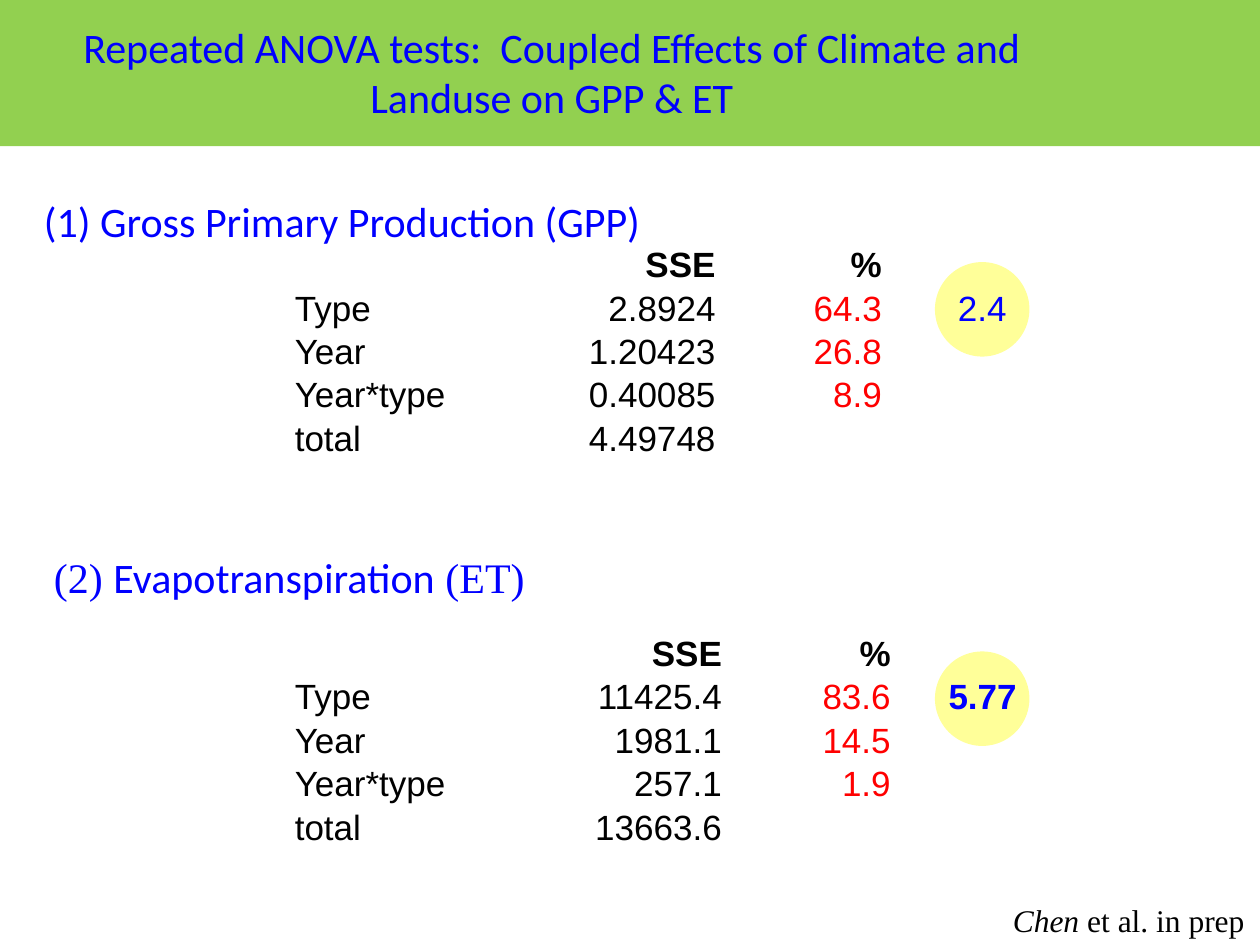
"""Build the slide of repeated ANOVA tests for GPP and ET."""
import pptx
import pptx.dml.color
import pptx.enum.shapes
import pptx.enum.text
import pptx.oxml.ns
import pptx.util

Inches = pptx.util.Inches
Align = pptx.enum.text.PP_ALIGN
Shape = pptx.enum.shapes.MSO_SHAPE

THEME = {
    "green": "92D050", "yellow": "FFFF99", "blue": "0000FF",
    "red": "FF0000", "black": "000000",
    "heading": 24, "table": 20, "credit": 18,
    "sans": "Calibri", "serif": "Times New Roman", "figures": "Arial",
    "plain_table": "{2D5ABB26-0587-4C30-8999-92F81FD0307C}",
}


def color(name):
    return pptx.dml.color.RGBColor.from_string(THEME[name])


def add_span(para, text, ink, size, face, **style):
    span = para.add_run()
    span.text = text
    span.font.color.rgb = color(ink)
    style.update(size=pptx.util.Pt(THEME[size]), name=THEME[face])
    for key, value in style.items():
        setattr(span.font, key, value)


deck = pptx.Presentation()
deck.slide_width, deck.slide_height = Inches(10), Inches(7.5)
page = deck.slides.add_slide(deck.slide_layouts[6])

for kind, place, fill in [
    (Shape.RECTANGLE, (0, 0, 10, 1.16), "green"),
    (Shape.OVAL, (7.42, 2.08, 0.75, 0.75), "yellow"),
    (Shape.OVAL, (7.42, 5.17, 0.75, 0.75), "yellow"),
]:
    shape = page.shapes.add_shape(kind, *map(Inches, place))
    shape.shadow.inherit = False
    shape.fill.solid()
    shape.fill.fore_color.rgb = color(fill)
    shape.line.fill.background()

title = "Repeated ANOVA tests:  Coupled Effects of Climate and Landuse on GPP & ET"
for place, wrap, align, ink, size, spans in [
    ((0.38, 0.12, 8, 0.91), True, Align.CENTER, "blue", "heading",
     [(title, "sans", False)]),
    ((0.25, 1.5, 4.98, 0.51), False, Align.LEFT, "blue", "heading",
     [("(1) Gross Primary Production (GPP)", "sans", False)]),
    ((0.33, 4.33, 3.98, 0.5), False, Align.LEFT, "blue", "heading",
     [("(2) ", "serif", False), ("Evapotranspiration", "sans", False),
      (" (ET)", "serif", False)]),
    ((7.94, 7.1, 2.06, 0.4), False, Align.LEFT, "black", "credit",
     [("Chen ", "serif", True), ("et al. in prep", "serif", False)]),
]:
    box = page.shapes.add_textbox(*map(Inches, place))
    box.text_frame.word_wrap = wrap
    para = box.text_frame.paragraphs[0]
    para.alignment = align
    for text, face, italic in spans:
        add_span(para, text, ink, size, face, italic=italic)

cell_format = {
    "margin_left": Inches(0.01), "margin_right": Inches(0.01),
    "margin_top": Inches(0.01), "margin_bottom": 0,
    "vertical_anchor": pptx.enum.text.MSO_ANCHOR.BOTTOM,
}
column_inks = ["black", "black", "red", "blue"]
header = ["", "SSE", "%", ""]
gpp_rows = [
    header,
    ["Type", "2.8924", "64.3", "2.4"],
    ["Year", "1.20423", "26.8", ""],
    ["Year*type", "0.40085", "8.9", ""],
    ["total", "4.49748", "", ""],
]
et_rows = [
    header,
    ["Type", "11425.4", "83.6", "5.77"],
    ["Year", "1981.1", "14.5", ""],
    ["Year*type", "257.1", "1.9", ""],
    ["total", "13663.6", "", ""],
]
for top, height, widths, rows, bold_ratio in [
    (1.92, 1.72, [1.89, 1.47, 1.32, 0.99], gpp_rows, False),
    (5, 1.73, [1.92, 1.49, 1.34, 1], et_rows, True),
]:
    frame = page.shapes.add_table(
        len(rows), len(widths), Inches(2.33), Inches(top),
        Inches(sum(widths)), Inches(height))
    table = frame.table
    table.first_row = table.horz_banding = False
    style = table._tbl.tblPr.find(pptx.oxml.ns.qn("a:tableStyleId"))
    style.text = THEME["plain_table"]
    for column, width in zip(table.columns, widths):
        column.width = Inches(width)
    for r, row in enumerate(rows):
        for c, text in enumerate(row):
            cell = table.cell(r, c)
            cell.fill.background()
            for key, value in cell_format.items():
                setattr(cell, key, value)
            if text:
                para = cell.text_frame.paragraphs[0]
                para.alignment = Align.RIGHT if c else Align.LEFT
                ink = column_inks[c] if r else "black"
                bold = r == 0 or (c == 3 and bold_ratio)
                add_span(para, text, ink, "table", "figures", bold=bold)

deck.save("out.pptx")
